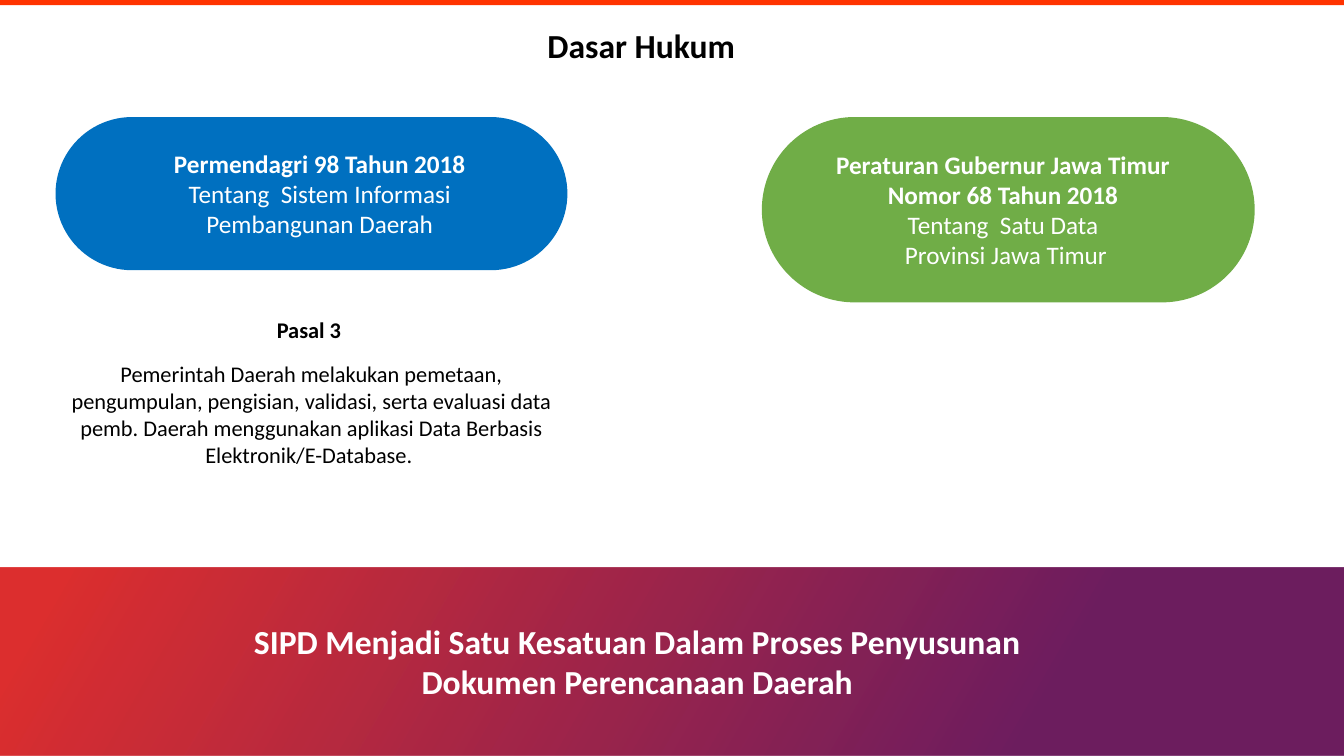
from lxml import etree
from pptx import Presentation
from pptx import util as u
from pptx.dml.color import RGBColor
from pptx.enum import shapes, text
from pptx.oxml.ns import qn

FONT = "Calibri"
WHITE, BLACK = "FFFFFF", "000000"


def tint(color, code):
    color.rgb = RGBColor.from_string(code)


def place(item, box):
    item.left, item.top, item.width, item.height = [u.Cm(n) for n in box]


def block(slide, kind, box, code=None):
    item = slide.shapes.add_shape(kind, *[u.Cm(n) for n in box])
    item.shadow.inherit = False
    item.line.fill.background()
    if code:
        item.fill.solid()
        tint(item.fill.fore_color, code)
    return item


def pill(slide, box, code):
    item = block(slide, shapes.MSO_SHAPE.ROUNDED_RECTANGLE, box, code)
    item.adjustments[0] = 0.5


def banner(slide, box, stops):
    fill = block(slide, shapes.MSO_SHAPE.RECTANGLE, box).fill
    fill.gradient()
    fill.gradient_angle = 330
    for stop, (pos, code) in zip(fill.gradient_stops, stops):
        stop.position = pos
        tint(stop.color, code)
    for color in fill._xPr.iter(qn("a:srgbClr")):
        etree.SubElement(color, qn("a:alpha"), val="88000")


def write(frame, paras, size, code, after=0):
    frame.word_wrap = True
    frame.vertical_anchor = text.MSO_ANCHOR.TOP
    for i, runs in enumerate(paras):
        para = frame.add_paragraph() if i else frame.paragraphs[0]
        para.alignment = text.PP_ALIGN.CENTER
        para.space_before = u.Pt(0)
        para.space_after = u.Pt(after)
        para.font.name = FONT
        para.font.size = u.Pt(size)
        para.font.bold = runs[0][1]
        tint(para.font.color, code)
        for words, bold in runs:
            run = para.add_run()
            run.text = words
            if bold != runs[0][1]:
                run.font.bold = bold


def label(slide, box, paras, size, code, after=0):
    item = slide.shapes.add_textbox(*[u.Cm(n) for n in box])
    write(item.text_frame, paras, size, code, after)


def head(slide, box, words):
    title = slide.shapes.title
    place(title, box)
    frame = title.text_frame
    frame.auto_size = text.MSO_AUTO_SIZE.NONE
    write(frame, [[(words, True)]], 24, BLACK)
    frame.paragraphs[0].line_spacing = u.Pt(33)


def main():
    deck = Presentation()
    deck.slide_width, deck.slide_height = u.Cm(33.87), u.Cm(19.05)
    slide = deck.slides.add_slide(deck.slide_layouts[5])

    banner(slide, (0, 14.3, 33.87, 4.75), [(0.05, "D71414"), (0.77, "5A004B")])
    head(slide, (12.73, 0.36, 6.86, 1.42), "Dasar Hukum")
    block(slide, shapes.MSO_SHAPE.RECTANGLE, (0, 0, 33.87, 0.13), "FF3300")

    label(slide, (1.4, 7.85, 12.9, 4.11), [
        [("Pasal 3 ", True)],
        [("Pemerintah Daerah melakukan pemetaan, pengumpulan, pengisian, "
          "validasi, serta evaluasi data pemb. Daerah menggunakan aplikasi "
          "Data Berbasis Elektronik/E-Database. ", False)],
    ], 16, BLACK, 12)
    label(slide, (3.76, 15.52, 24.79, 2.31), [
        [("SIPD Menjadi Satu Kesatuan Dalam Proses Penyusunan ", True)],
        [("Dokumen Perencanaan Daerah ", True)],
    ], 24, WHITE)

    pill(slide, (1.4, 2.95, 12.9, 3.86), "0070C0")
    label(slide, (3.4, 3.61, 9.32, 2.57), [
        [("Permendagri 98 Tahun 2018 ", True),
         ("Tentang  Sistem Informasi Pembangunan Daerah", False)],
    ], 18, WHITE, 12)

    pill(slide, (19.2, 2.95, 12.42, 4.67), "70AD47")
    label(slide, (20.04, 3.63, 10.62, 3.33), [
        [("Peraturan Gubernur Jawa Timur  Nomor 68 Tahun 2018 ", True)],
        [("Tentang  Satu Data ", False)],
        [("Provinsi Jawa Timur", False)],
    ], 18, WHITE)

    deck.save("out.pptx")


if __name__ == "__main__":
    main()
